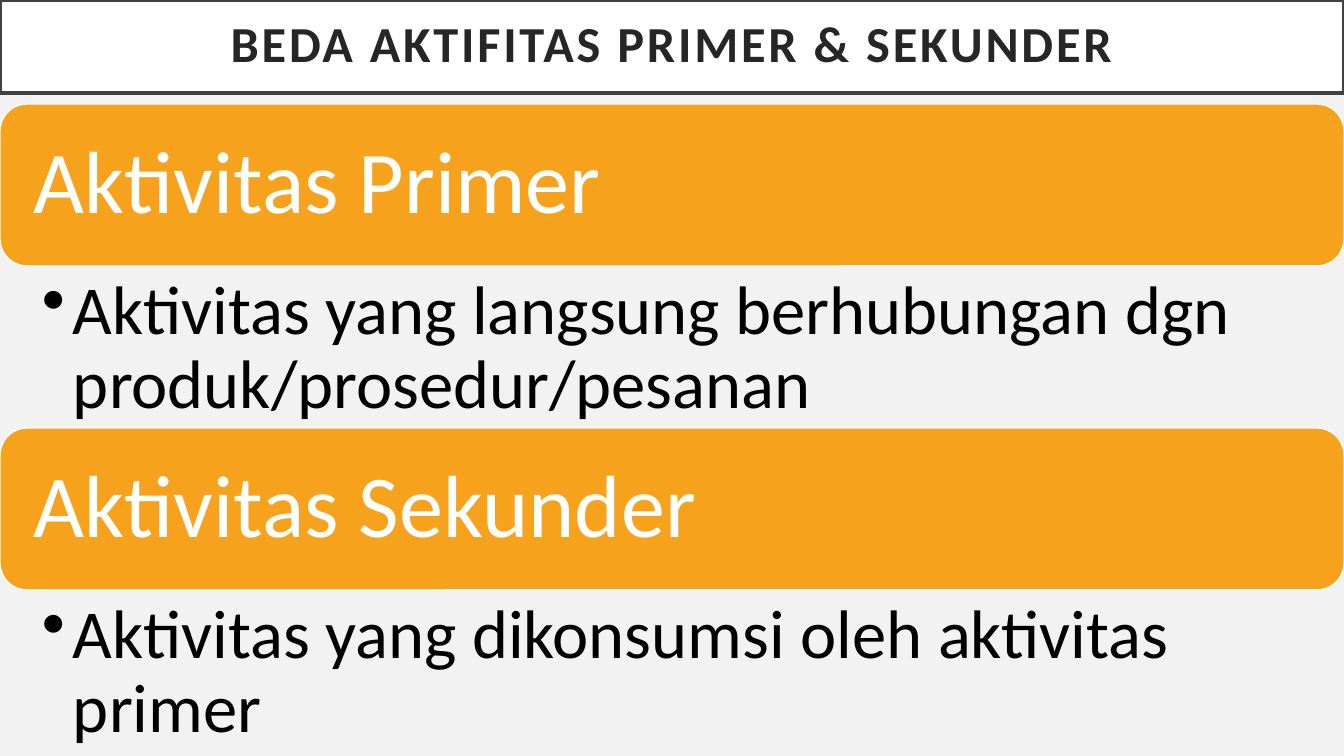
import pptx
import pptx.util
import pptx.dml.color
import pptx.enum.shapes
import pptx.enum.text
import pptx.oxml.ns
from lxml import etree

RGBColor = pptx.dml.color.RGBColor
BACKGROUND = RGBColor(0xF2, 0xF2, 0xF2)
WHITE = RGBColor(0xFF, 0xFF, 0xFF)
BLACK = RGBColor(0, 0, 0)
ORANGE = RGBColor(0xF6, 0xA2, 0x1D)
FRAME = RGBColor(0x40, 0x40, 0x40)
TITLE_INK = RGBColor(0x26, 0x26, 0x26)

SHAPE = pptx.enum.shapes.MSO_SHAPE
ALIGN = pptx.enum.text.PP_ALIGN
ANCHOR = pptx.enum.text.MSO_ANCHOR
FONT = "Calibri"
WIDTH, HEIGHT = 1344, 756

TITLE = "BEDA AKTIFITAS PRIMER & SEKUNDER"
ACTIVITIES = [
    ("Aktivitas Primer",
     "Aktivitas yang langsung berhubungan dgn produk/prosedur/pesanan"),
    ("Aktivitas Sekunder",
     "Aktivitas yang dikonsumsi oleh aktivitas primer"),
]


def px(n):
    return pptx.util.Emu(round(n * 914400 / 100.8))


def add_box(slide, kind, box, fill, line, line_width):
    sp = slide.shapes.add_shape(kind, *map(px, box))
    sp.shadow.inherit = False
    sp.fill.solid()
    sp.fill.fore_color.rgb = fill
    sp.line.color.rgb = line
    sp.line.width = pptx.util.Pt(line_width)
    return sp


def set_text(sp, text, size, color, insets, anchor, align=ALIGN.LEFT):
    tf = sp.text_frame
    tf.word_wrap = True
    tf.vertical_anchor = anchor
    tf.margin_left, tf.margin_top, tf.margin_right, tf.margin_bottom = map(px, insets)
    tf.text = text
    p = tf.paragraphs[0]
    p.alignment = align
    p.line_spacing = 0.9
    r = p.runs[0]
    r.font.name = FONT
    r.font.size = pptx.util.Pt(size)
    r.font.color.rgb = color
    return p


def add_title(slide, box):
    sp = add_box(slide, SHAPE.RECTANGLE, box, WHITE, FRAME, 2.5)
    p = set_text(sp, TITLE, 36, TITLE_INK, [20] * 4, ANCHOR.MIDDLE, ALIGN.CENTER)
    r = p.runs[0]
    r.font.bold = True
    r.font._element.set("spc", "200")


def add_activity(slide, box, heading, detail):
    left, top, width, height = box
    half = height // 2

    # Orange heading bar
    bar = add_box(slide, SHAPE.ROUNDED_RECTANGLE, (left, top, width, half),
                  ORANGE, WHITE, 1)
    set_text(bar, heading, 63, WHITE, [26] * 4, ANCHOR.MIDDLE)

    # Bulleted explanation
    tb = slide.shapes.add_textbox(*map(px, (left, top + half, width, half)))
    p = set_text(tb, detail, 49, BLACK, (42, 9, 49, 9), ANCHOR.TOP)
    pPr = p._p.get_or_add_pPr()
    pPr.set("marL", str(px(31)))
    pPr.set("indent", str(-px(31)))
    bullet = etree.SubElement(pPr, pptx.oxml.ns.qn("a:buChar"))
    bullet.set("char", "•")


def main():
    prs = pptx.Presentation()
    prs.slide_width, prs.slide_height = px(WIDTH), px(HEIGHT)
    slide = prs.slides.add_slide(prs.slide_layouts[6])
    slide.background.fill.solid()
    slide.background.fill.fore_color.rgb = BACKGROUND

    add_title(slide, (0, 0, WIDTH, 93))
    top, height = 104, 324
    for i, (heading, detail) in enumerate(ACTIVITIES):
        add_activity(slide, (0, top + i * height, WIDTH, height), heading, detail)

    prs.save("out.pptx")


if __name__ == "__main__":
    main()
